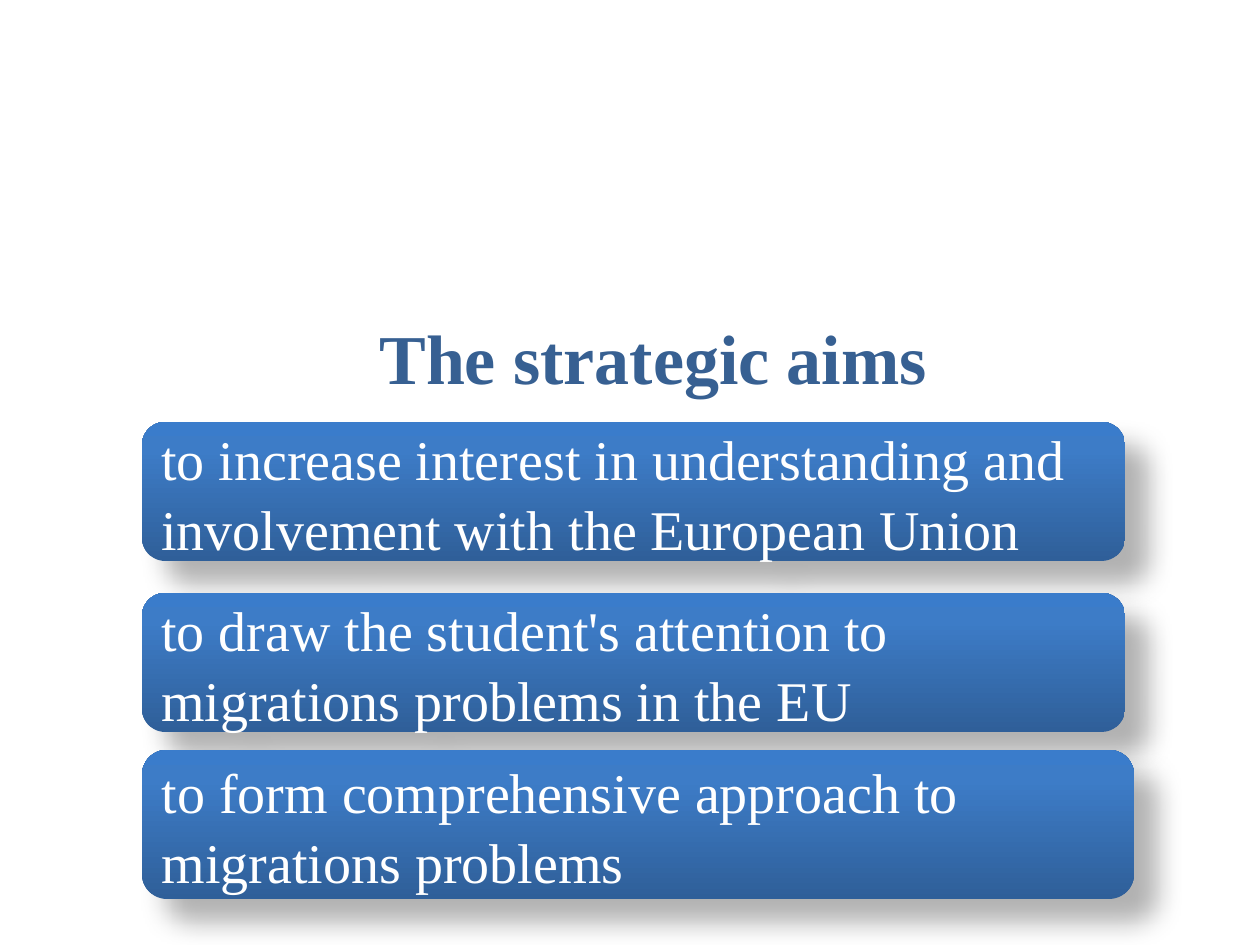
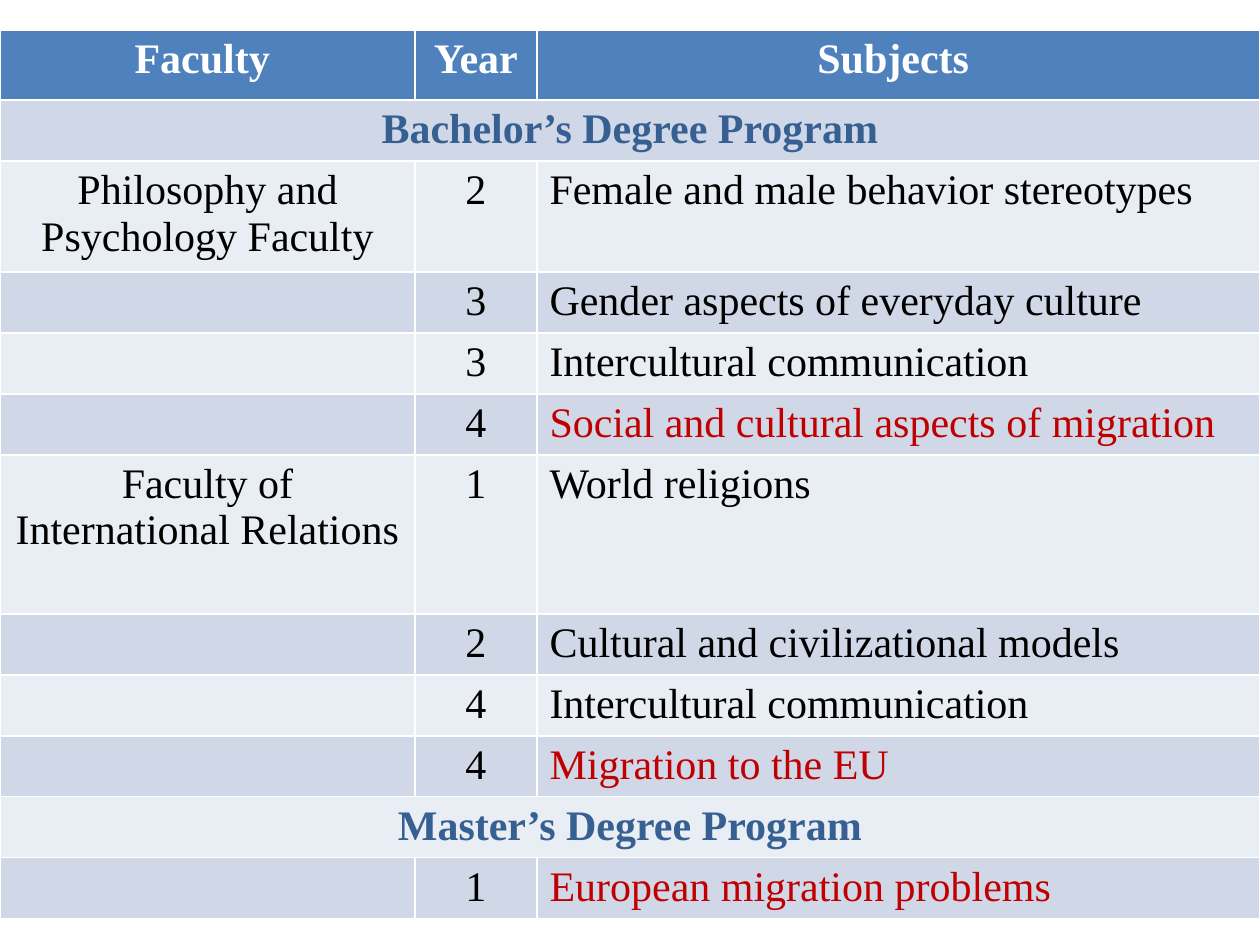
"""Build two slides: the strategic aims and the table of subjects."""
from pptx import Presentation
from pptx.dml.color import RGBColor
from pptx.enum.shapes import MSO_SHAPE
from pptx.enum.text import MSO_ANCHOR, PP_ALIGN
from pptx.oxml import parse_xml
from pptx.oxml.ns import nsdecls
from pptx.util import Pt

SCALE = 914400 / 126
FONT = "Times New Roman"
WHITE = RGBColor(0xFF, 0xFF, 0xFF)
BLACK = RGBColor(0x00, 0x00, 0x00)
NAVY = RGBColor(0x37, 0x60, 0x92)
RED = RGBColor(0xC0, 0x00, 0x00)
BLUE = RGBColor(0x4F, 0x81, 0xBD)
BANDS = RGBColor(0xE9, 0xED, 0xF4), RGBColor(0xD0, 0xD8, 0xE8)
STOPS = (
    (0, RGBColor(0x2F, 0x5F, 0x99)),
    (80, RGBColor(0x3D, 0x7C, 0xC7)),
    (100, RGBColor(0x3A, 0x7C, 0xCB)),
)

AIMS = (
    (422, 983, 139, "to increase interest in understanding and involvement with the European Union"),
    (593, 983, 139, "to draw the student's attention to migrations problems in the EU"),
    (750, 992, 149, "to form comprehensive approach to migrations problems"),
)
ROWS = (
    ("Faculty ", "Year", "Subjects "),
    ("Bachelor’s Degree Program",),
    ("Philosophy and Psychology Faculty", "2", "Female and male behavior stereotypes"),
    ("", "3", "Gender aspects of everyday culture"),
    ("", "3", "Intercultural communication"),
    ("", "4", "Social and cultural aspects of migration"),
    ("Faculty of International Relations", "1", "World religions"),
    ("", "2", "Cultural and civilizational models"),
    ("", "4", "Intercultural communication"),
    ("", "4", "Migration to the EU"),
    ("Master’s Degree Program",),
    ("", "1", "European migration problems"),
)
COLS = 415, 122, 723
TALL = {0: 70, 2: 111, 6: 159}
LOW = 61


def px(size):
    """Turn px into EMU."""
    return round(size * SCALE)


class Deck:
    """Hold the style and the current slide."""

    def __init__(self):
        self.show = Presentation()
        self.show.slide_width, self.show.slide_height = px(1260), px(945)

    def add(self, layout):
        """Start a slide on the given layout."""
        self.slide = self.show.slides.add_slide(self.show.slide_layouts[layout])

    def label(self, frame, text, size, color, bold=False, align=None):
        """Put one styled paragraph in a text frame."""
        para = frame.paragraphs[0]
        para.text = text
        para.alignment = align
        font = para.font
        font.name, font.size, font.bold = FONT, Pt(size), bold
        font.color.rgb = color
        return para

    def title(self, text, left, top, width, height):
        """Place the title."""
        shape = self.slide.shapes.title
        shape.left, shape.top = px(left), px(top)
        shape.width, shape.height = px(width), px(height)
        frame = shape.text_frame
        frame.vertical_anchor = MSO_ANCHOR.MIDDLE
        self.label(frame, text, 40, NAVY, True, PP_ALIGN.CENTER)

    def panel(self, text, left, top, width, height):
        """Draw a rounded panel with a gradient and a soft shadow."""
        shape = self.slide.shapes.add_shape(
            MSO_SHAPE.ROUNDED_RECTANGLE, px(left), px(top), px(width), px(height))
        shape.line.fill.background()
        shape.shadow.inherit = False
        props = shape._element.spPr
        stops = "".join(
            f'<a:gs pos="{pos * 1000}"><a:srgbClr val="{color}"/></a:gs>'
            for pos, color in STOPS)
        props.insert(2, parse_xml(
            f'<a:gradFill {nsdecls("a")} rotWithShape="1"><a:gsLst>{stops}</a:gsLst>'
            '<a:lin ang="16200000" scaled="0"/></a:gradFill>'))
        props[-1].append(parse_xml(
            f'<a:outerShdw {nsdecls("a")} blurRad="{Pt(15)}" dist="{Pt(18)}" '
            'dir="2700000" algn="tl" rotWithShape="0">'
            f'<a:srgbClr val="{BLACK}"><a:alpha val="30000"/></a:srgbClr></a:outerShdw>'))
        frame = shape.text_frame
        frame.word_wrap = True
        frame.vertical_anchor = MSO_ANCHOR.MIDDLE
        para = self.label(frame, text, 32, WHITE, align=PP_ALIGN.LEFT)
        para.line_spacing = 1.05

    def table(self, rows, left, top, hot):
        """Draw the table, with hot words marking red subjects."""
        highs = [TALL.get(r, LOW) for r in range(len(rows))]
        grid = self.slide.shapes.add_table(
            len(rows), len(COLS), px(left), px(top), px(sum(COLS)), px(sum(highs))).table
        for col, width in zip(grid.columns, COLS):
            col.width = px(width)
        for r, (texts, high) in enumerate(zip(rows, highs)):
            grid.rows[r].height = px(high)
            head, wide = r == 0, len(texts) == 1
            for c in range(len(COLS)):
                cell = grid.cell(r, c)
                cell.fill.solid()
                cell.fill.fore_color.rgb = BLUE if head else BANDS[r % 2]
            if wide:
                grid.cell(r, 0).merge(grid.cell(r, len(COLS) - 1))
            for c, text in enumerate(texts):
                if not text:
                    continue
                mark = c == 2 and any(word in text for word in hot)
                color = WHITE if head else NAVY if wide else RED if mark else BLACK
                align = PP_ALIGN.LEFT if c == 2 and not head else PP_ALIGN.CENTER
                self.label(grid.cell(r, c).text_frame, text, 24, color, head or wide, align)


def main():
    """Build and save the slides."""
    deck = Deck()
    deck.add(5)
    deck.title("The strategic aims ", 95, 292, 1134, 130)
    for top, width, height, text in AIMS:
        deck.panel(text, 142, top, width, height)
    deck.add(6)
    deck.table(ROWS, 0, 30, ("migration", "Migration"))
    deck.show.save("out.pptx")


if __name__ == "__main__":
    main()
